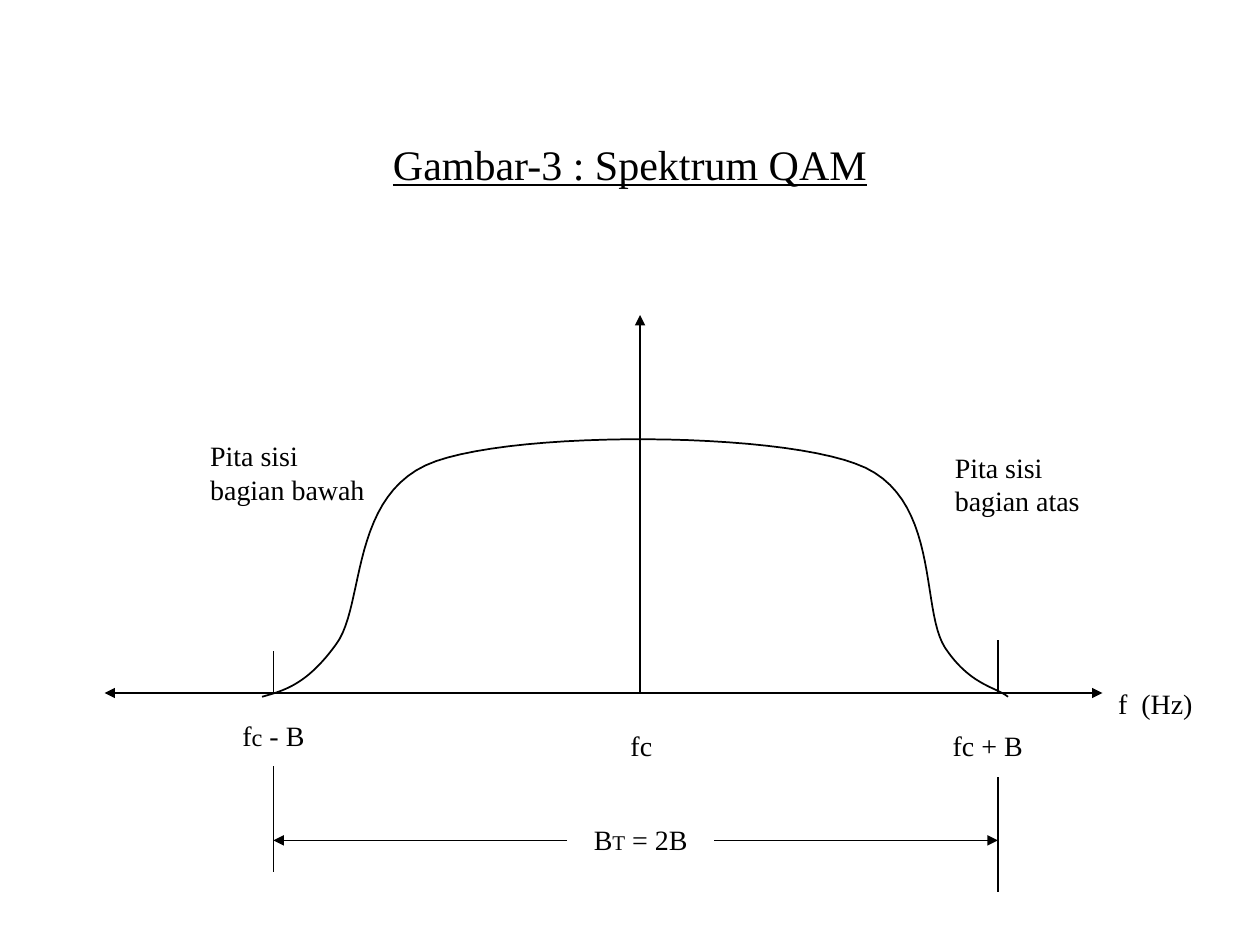
from lxml.etree import SubElement
from pptx import Presentation
from pptx.dml.color import RGBColor
from pptx.enum.shapes import MSO_CONNECTOR
from pptx.enum.text import MSO_ANCHOR, MSO_AUTO_SIZE, PP_ALIGN
from pptx.oxml.ns import qn
from pptx.util import Pt

PX = 9144
BLACK = RGBColor(0, 0, 0)
WHITE = RGBColor(255, 255, 255)
FONT = "Times New Roman"
STEPS = 24


def add_text(s, x, y, w, h, lines, size=16, align=PP_ALIGN.CENTER,
             underline=False, wrap=False):
    sp = s.shapes.add_textbox(x * PX, y * PX, w * PX, h * PX)
    tf = sp.text_frame
    tf.word_wrap = wrap
    tf.auto_size = MSO_AUTO_SIZE.NONE if wrap else MSO_AUTO_SIZE.SHAPE_TO_FIT_TEXT
    tf.vertical_anchor = MSO_ANCHOR.MIDDLE
    for i, line in enumerate(lines):
        p = tf.paragraphs[0] if i == 0 else tf.add_paragraph()
        p.alignment = align
        for text, run_size in [(line, size)] if isinstance(line, str) else line:
            r = p.add_run()
            r.text = text
            r.font.name = FONT
            r.font.size = Pt(run_size)
            r.font.underline = underline
            r.font.color.rgb = BLACK


def add_line(s, x1, y1, x2, y2, arrows=()):
    c = s.shapes.add_connector(MSO_CONNECTOR.STRAIGHT, x1 * PX, y1 * PX, x2 * PX, y2 * PX)
    c.line.color.rgb = BLACK
    c.line.width = Pt(0.75)
    ln = c.line._get_or_add_ln()
    for end in arrows:
        SubElement(ln, qn(f"a:{end}"), type="triangle")
    SubElement(c._element.spPr, qn("a:effectLst"))


def bezier(points):
    yield points[0]
    for i in range(0, len(points) - 1, 3):
        a, b, c, d = points[i:i + 4]
        for n in range(1, STEPS + 1):
            t = n / STEPS
            u = 1 - t
            yield tuple(u**3 * a[k] + 3 * u * u * t * b[k] + 3 * u * t * t * c[k] + t**3 * d[k]
                        for k in (0, 1))


def add_curve(s, points):
    start, *rest = [(round(x * PX), round(y * PX)) for x, y in bezier(points)]
    builder = s.shapes.build_freeform(*start)
    builder.add_line_segments(rest, close=False)
    sp = builder.convert_to_shape()
    sp.shadow.inherit = False
    sp.fill.background()
    sp.line.color.rgb = BLACK
    sp.line.width = Pt(1)


def draw_title(s, x, y, w, h):
    add_text(s, x, y, w, h, ["Gambar-3 : Spektrum QAM"], size=24, underline=True, wrap=True)


def draw_spectrum(s, x, y, w, h):
    base, center, low, high = y + h, x + 425, x + 134, x + 709
    add_line(s, x, base, x + w, base, ("headEnd", "tailEnd"))
    add_line(s, center, base, center, y, ("tailEnd",))
    curve = [(125, 303), (143, 298), (161, 293), (184, 261), (207, 230), (194, 140),
             (263, 116), (332, 92), (529, 93), (596, 118), (664, 142), (647, 233),
             (667, 264), (687, 294), (707, 295), (717, 303)]
    add_curve(s, [(x + px, y + py) for px, py in curve])
    add_line(s, high, base, high, base - 42)
    add_line(s, low, base, low, base - 33)
    add_text(s, low - 35, base + 15, 70, 37, [[("f", 16), ("c", 14), (" - B", 16)]])
    add_text(s, center - 18, base + 23, 38, 37, ["fc"])
    add_text(s, high - 46, base + 23, 76, 37, ["fc + B"])
    add_text(s, x + w + 2, base - 10, 80, 37, ["f  (Hz)"])
    add_text(s, x + 665, y + 102, 120, 64, ["Pita sisi", "bagian atas"], align=PP_ALIGN.LEFT)
    add_text(s, x + 74, y + 93, 143, 64, ["Pita sisi", "bagian bawah"], align=PP_ALIGN.LEFT)


def draw_bandwidth(s, x, y, w, h):
    mid = y + 59
    add_line(s, x, y, x, y + 84)
    add_line(s, x + w, y + 9, x + w, y + h)
    add_text(s, x + 244, mid - 19, 95, 37, [[("B", 16), ("T", 12), (" = 2B", 16)]])
    add_line(s, x + 350, mid, x + w, mid, ("tailEnd",))
    add_line(s, x + 233, mid, x, mid, ("tailEnd",))


def main():
    prs = Presentation()
    prs.slide_width, prs.slide_height = 1000 * PX, 750 * PX
    s = prs.slides.add_slide(prs.slide_layouts[6])
    s.background.fill.solid()
    s.background.fill.fore_color.rgb = WHITE
    draw_title(s, 75, 67, 850, 125)
    draw_spectrum(s, 83, 250, 792, 300)
    draw_bandwidth(s, 217, 608, 575, 100)
    prs.save("out.pptx")


if __name__ == "__main__":
    main()
